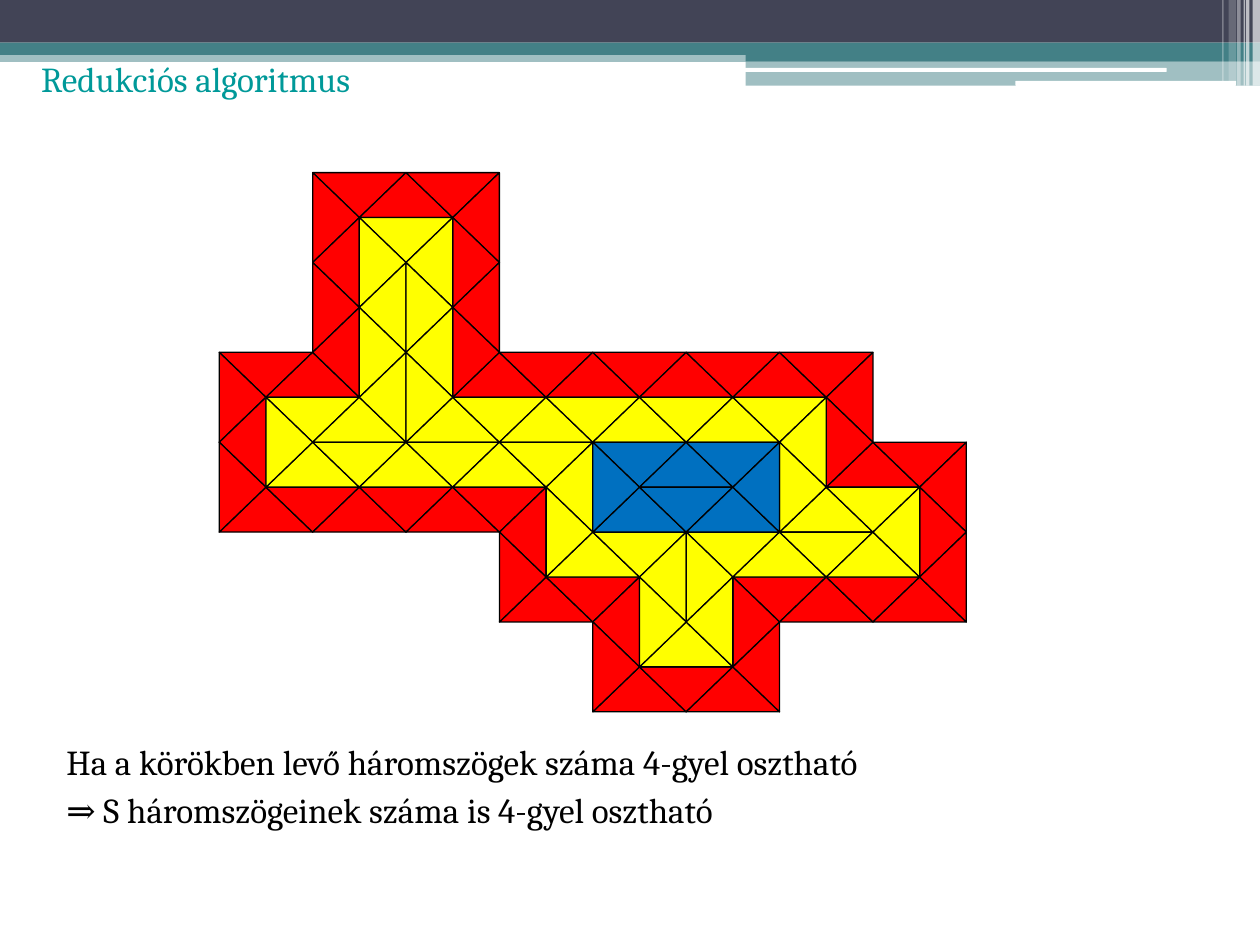
import pptx
import pptx.dml.color
import pptx.enum.shapes
import pptx.enum.text
import pptx.oxml
import pptx.oxml.ns
import pptx.util

Cm = pptx.util.Cm
Pt = pptx.util.Pt
SHAPES = pptx.enum.shapes.MSO_SHAPE
ANCHORS = pptx.enum.text.MSO_ANCHOR

PAGE_WIDTH, PAGE_HEIGHT = 25.4, 19.05
FONT = "Cambria"
NAVY, TEAL, WHITE = "424456", "438086", "FFFFFF"
RED, YELLOW, BLUE, BLACK = "FF0000", "FFFF00", "0070C0", "000000"

# Header bars: kind, left, top, width, height, colour, opacity in percent
HEADER_BARS = [
    (SHAPES.RECTANGLE, 0, 1.02, PAGE_WIDTH, 0.23, TEAL, 50),
    (SHAPES.RECTANGLE, 0, 0, PAGE_WIDTH, 0.86, NAVY, 100),
    (SHAPES.RECTANGLE, 0, 0.86, PAGE_WIDTH, 0.25, TEAL, 100),
    (SHAPES.RECTANGLE, 15.03, 0.99, 10.37, 0.24, TEAL, 100),
    (SHAPES.RECTANGLE, 15.03, 1.23, 10.37, 0.5, TEAL, 50),
    (SHAPES.ROUNDED_RECTANGLE, 15.01, 1.37, 8.51, 0.08, WHITE, 100),
    (SHAPES.ROUNDED_RECTANGLE, 20.47, 1.63, 4.45, 0.1, WHITE, 100),
]
# Upright stripes at the right edge: left, width, height, opacity
HEADER_STRIPES = [
    (25.25, 0.15, 1.73, 65), (25.12, 0.07, 1.73, 65), (25.07, 0.03, 1.73, 60),
    (24.94, 0.07, 1.73, 40), (24.77, 0.15, 1.63, 20), (24.64, 0.03, 1.63, 30),
]

COLUMNS, ROWS = 16, 12
# Strips of triangles for each ring: first column, first row, count
RINGS = [
    (RED,
     [(2, 0, 3), (0, 4, 2), (5, 4, 8), (13, 6, 2), (0, 7, 6), (6, 9, 2),
      (11, 9, 4), (8, 11, 3)],
     [(2, 0, 4), (5, 0, 4), (0, 4, 3), (13, 4, 2), (15, 6, 3), (6, 7, 2),
      (8, 9, 2), (11, 9, 2)]),
    (YELLOW,
     [(3, 1, 1), (1, 5, 2), (4, 5, 8), (1, 6, 6), (12, 7, 2), (7, 8, 2),
      (10, 8, 4), (9, 10, 1)],
     [(3, 1, 4), (4, 1, 4), (1, 5, 1), (12, 5, 2), (7, 6, 2), (14, 7, 1),
      (9, 8, 2), (10, 8, 2)]),
    (BLUE, [(8, 6, 3), (8, 7, 3)], [(8, 6, 1), (11, 6, 1)]),
]


def rgb(code):
    return pptx.dml.color.RGBColor.from_string(code)


def add_filled(page, kind, box, colour, opacity=100):
    left, top, width, height = box
    shape = page.shapes.add_shape(kind, Cm(left), Cm(top), Cm(width), Cm(height))
    shape.shadow.inherit = False
    shape.fill.solid()
    shape.fill.fore_color.rgb = rgb(colour)
    shape.line.fill.background()
    if opacity < 100:
        tint = shape.fill._xPr.find(".//" + pptx.oxml.ns.qn("a:srgbClr"))
        alpha = pptx.oxml.parse_xml(
            f'<a:alpha {pptx.oxml.ns.nsdecls("a")} val="{opacity * 1000}"/>')
        tint.append(alpha)
    return shape


def add_header(page, left, top):
    for kind, x, y, width, height, colour, opacity in HEADER_BARS:
        add_filled(page, kind, (left + x, top + y, width, height), colour, opacity)
    for x, width, height, opacity in HEADER_STRIPES:
        add_filled(page, SHAPES.RECTANGLE, (left + x, top, width, height),
                   WHITE, opacity)


def add_triangle(page, centre_x, centre_y, base, height, turn, colour):
    box = (centre_x - base / 2, centre_y - height / 2, base, height)
    triangle = add_filled(page, SHAPES.ISOSCELES_TRIANGLE, box, colour)
    triangle.rotation = turn
    triangle.line.color.rgb = rgb(BLACK)
    triangle.line.width = Pt(0.75)


def add_rings(page, left, top, width, height):
    """Tile the rings; the parity of column + row decides where a triangle points."""
    cell_width, cell_height = width / COLUMNS, height / ROWS
    for colour, level_strips, upright_strips in RINGS:
        for column, row, count in level_strips:
            for step in range(column, column + count):
                turn = 0 if (step + row) % 2 else 180
                add_triangle(page, left + (step + 1) * cell_width,
                             top + (row + 0.5) * cell_height,
                             2 * cell_width, cell_height, turn, colour)
        for column, row, count in upright_strips:
            for step in range(row, row + count):
                turn = 270 if (column + step) % 2 else 90
                add_triangle(page, left + (column + 0.5) * cell_width,
                             top + (step + 1) * cell_height,
                             2 * cell_height, cell_width, turn, colour)


def add_text(page, box, lines, colour, anchor, indent=0, space_before=0):
    left, top, width, height = box
    frame = page.shapes.add_textbox(
        Cm(left), Cm(top), Cm(width), Cm(height)).text_frame
    frame.word_wrap = True
    frame.vertical_anchor = anchor
    frame.margin_left = Cm(0.25 + indent)
    for index, line in enumerate(lines):
        para = frame.add_paragraph() if index else frame.paragraphs[0]
        para.space_before = Pt(space_before)
        span = para.add_run()
        span.text = line
        span.font.name = FONT
        span.font.size = Pt(20)
        span.font.color.rgb = rgb(colour)


def main():
    deck = pptx.Presentation()
    deck.slide_width, deck.slide_height = Cm(PAGE_WIDTH), Cm(PAGE_HEIGHT)
    page = deck.slides.add_slide(deck.slide_layouts[6])
    add_header(page, 0, 0)
    add_text(page, (0.58, 0.71, 14.4, 1.75), ["Redukciós algoritmus"],
             "009999", ANCHORS.MIDDLE)
    add_text(page, (0.58, 14.81, 24.13, 3.45),
             ["Ha a körökben levő háromszögek száma 4-gyel osztható",
              "⇒ S háromszögeinek száma is 4-gyel osztható"],
             BLACK, ANCHORS.TOP, indent=0.51, space_before=3)
    add_rings(page, 4.42, 3.48, 15.06, 10.87)
    deck.save("out.pptx")


if __name__ == "__main__":
    main()
